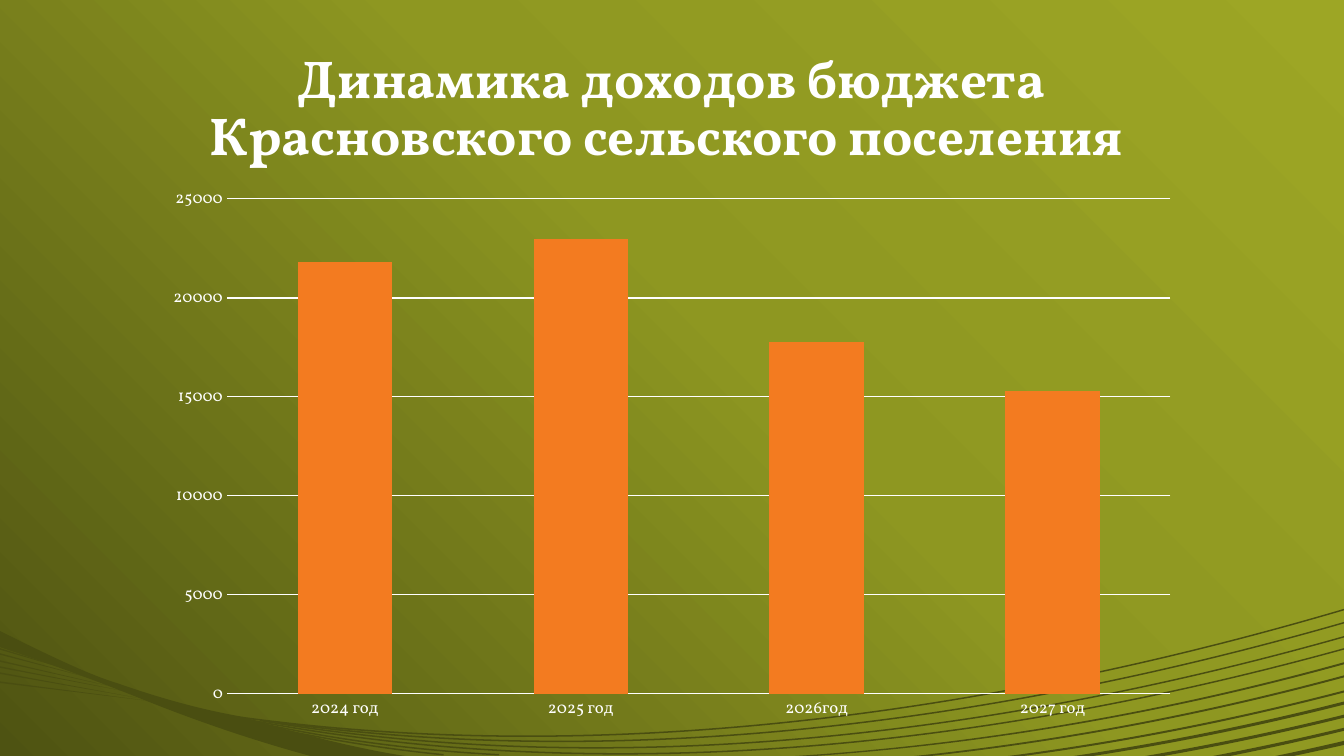
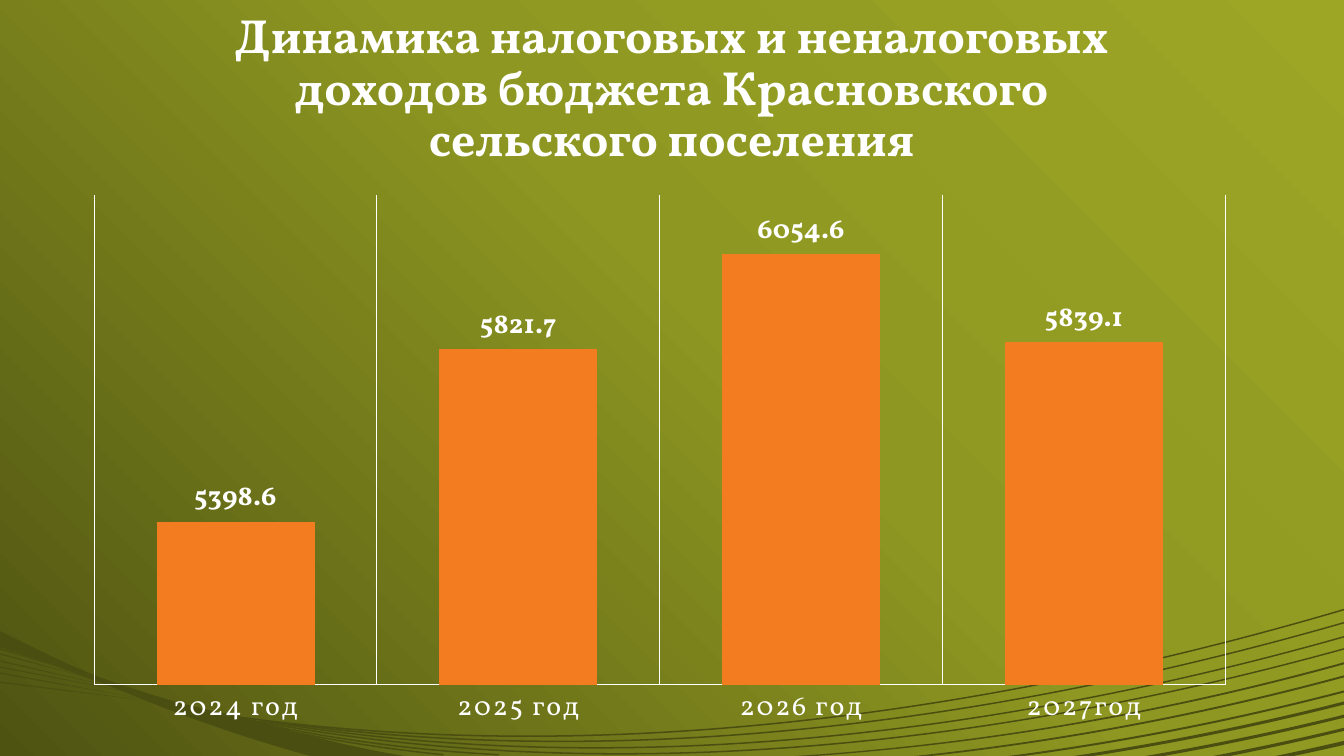
from lxml.etree import SubElement
from pptx import Presentation
from pptx.chart.data import CategoryChartData
from pptx.dml.color import RGBColor
from pptx.enum.chart import XL_CHART_TYPE as CT, XL_LABEL_POSITION as LP, XL_TICK_MARK as TM
from pptx.enum.text import MSO_ANCHOR, MSO_AUTO_SIZE, PP_ALIGN
from pptx.oxml.ns import qn
from pptx.util import Inches, Pt

W, H = 13.33, 7.5
FONT = "Vollkorn"
COLORS = {"light": "9DA625", "mid": "8E9721", "dark": "4E5312",
          "wave": "4A4E11", "text": "FFFFFF", "bar": "F37B20"}
BACKGROUND = [(0, "light"), (45, "mid"), (100, "dark")]
TITLE_BOX = (1.66, 0.44, 10, 1.27)

# Content
SLIDES = [
    {"title": "Динамика доходов бюджета Красновского сельского поселения ",
     "title_size": 38, "box": (1.66, 1.86, 10, 5.35),
     "plot": (0.059, 0.019, 0.936, 0.92),
     "cats": ["2024 год", "2025 год", "2026год", "2027 год"],
     "vals": [21800, 23000, 17800, 15300],
     "range": (0, 25000), "gap": 150, "size": 12, "values_on": "axis"},
    {"title": "Динамика налоговых и неналоговых доходов бюджета "
              "Красновского сельского поселения",
     "title_size": 34.2, "box": (0.76, 1.71, 11.58, 5.51),
     "plot": (0.015, 0.042, 0.969, 0.902),
     "cats": ["2024 год", "2025 год", "2026 год", "2027год"],
     "vals": [5398.6, 5821.7, 6054.6, 5839.1],
     "range": (5000, 6200), "gap": 79, "size": 20, "values_on": "bars"},
]

# Wave: short stripes as (top and bottom on the right edge, two ends on the floor)
STRIPES = [(7.35, 7.39, 12.65, 12.83), (7.22, 7.25, 12.03, 12.2),
           (7.09, 7.12, 11.36, 11.54), (6.96, 6.99, 10.65, 10.84),
           (6.85, 6.87, 10, 10.15), (6.7, 6.72, 9.07, 9.23),
           (6.57, 6.59, 7.89, 8.08)]
# Long strands as Bezier points
STRANDS = [[(2.4, 7.11), (6, 7.6), (9.8, 7.08), (W, 6.04)],
           [(2.76, 7.16), (6.31, 7.65), (9.99, 7.13), (W, 6.17)],
           [(2.58, 7.14), (6.18, 7.75), (9.93, 7.27), (W, 6.31)],
           [(2.45, 7.13), (6.08, 7.83), (9.89, 7.38), (W, 6.43)],
           [(2.28, 7.1), (3.12, 7.3), (4, 7.43), (4.95, 7.48)],
           [(2.21, 7.1), (2.95, 7.28), (3.69, 7.41), (4.4, 7.48)]]
STRAND_WIDTH = 0.015
# Ribs on the left as (height on the left edge, tip)
RIBS = [(6.76, (1.45, 6.95)), (6.67, (1.35, 6.92)), (6.61, (1.2, 6.85)),
        (6.55, (1.06, 6.8)), (6.48, (0.91, 6.73)), (6.43, (0.7, 6.65))]
BODY = [[(0, 6.26), (0.5, 6.51), (0.9, 6.7), (1.17, 6.78)],
        [(1.17, 6.78), (1.6, 6.93), (2, 7.04), (2.4, 7.11)],
        [(2.4, 7.11), (2.9, 7.26), (3.5, 7.42), (4.02, H)],
        [(3.08, H), (2.53, 7.35), (2, 7.17), (1.47, 6.96)],
        [(1.47, 6.96), (1.1, 6.81), (0.55, 6.6), (0, 6.42)]]


def rgb(name):
    return RGBColor.from_string(COLORS[name])


def stripe_edge(y, x):
    """Curve from the right edge to the floor; the sag grows with length squared."""
    sag = 0.0065 * (W - x) ** 2
    dx, dy = (x - W) / 3, (H - y) / 3
    return [(W, y), (W + dx, y + dy + sag), (W + 2 * dx, y + 2 * dy + sag), (x, H)]


def straight(a, b):
    return [a, a, b, b]


def wave_outlines():
    """Closed outlines, each a list of four-point curves."""
    stripes = [[stripe_edge(top, x0), stripe_edge(bottom, x1)[::-1]]
               for top, bottom, x0, x1 in STRIPES]
    strands = [[curve, [(x, y + STRAND_WIDTH) for x, y in curve[::-1]]]
               for curve in STRANDS]
    ribs = [[straight((0, y), tip), straight(tip, (0, y + STRAND_WIDTH))]
            for y, tip in RIBS]
    return [BODY] + stripes + strands + ribs


def curve_points(outline):
    """Start point, then three points a curve, with straight joins between curves."""
    points = [outline[0][0]]
    for curve in outline:
        if curve[0] != points[-1]:
            points += straight(points[-1], curve[0])[1:]
        points += curve[1:]
    return [(Inches(x), Inches(y)) for x, y in points]


def bend_paths(sp):
    """Turn each three line steps into one curve, and each outline into a path."""
    paths = sp.element.find(".//" + qn("a:pathLst"))
    source = paths[0]
    size = {"w": source.get("w"), "h": source.get("h")}
    corners = []
    for step in list(source):
        if step.tag == qn("a:moveTo"):
            target = SubElement(paths, qn("a:path"), size)
            target.append(step)
        elif step.tag == qn("a:lnTo"):
            corners.append(step[0])
            if len(corners) == 3:
                SubElement(target, qn("a:cubicBezTo")).extend(corners)
                corners = []
        else:
            target.append(step)
    paths.remove(source)


def set_background(master):
    fill = master.background.fill
    fill.gradient()
    fill.gradient_angle = 225
    stops = master.element.find(".//" + qn("a:gsLst"))
    for stop in list(stops):
        stops.remove(stop)
    for pos, name in BACKGROUND:
        stop = SubElement(stops, qn("a:gs"), pos=str(pos * 1000))
        SubElement(stop, qn("a:srgbClr"), val=COLORS[name])


def add_wave(slide, master):
    """Draw the wave, then hand it to the master so that all slides share it."""
    first, *others = map(curve_points, wave_outlines())
    builder = slide.shapes.build_freeform(*first[0], scale=1.0)
    builder.add_line_segments(first[1:], close=True)
    for points in others:
        builder.move_to(*points[0])
        builder.add_line_segments(points[1:], close=True)
    sp = builder.convert_to_shape()
    bend_paths(sp)
    sp.shadow.inherit = False
    sp.fill.solid()
    sp.fill.fore_color.rgb = rgb("wave")
    sp.line.fill.background()
    master.shapes.element.insert(2, sp.element)


def style_font(font, size, bold=False):
    font.name, font.size, font.bold = FONT, Pt(size), bold
    font.color.rgb = rgb("text")


def add_title(slide, text, size):
    sp = slide.shapes.title
    sp.left, sp.top, sp.width, sp.height = map(Inches, TITLE_BOX)
    tf = sp.text_frame
    tf.word_wrap, tf.auto_size = True, MSO_AUTO_SIZE.NONE
    tf.vertical_anchor = MSO_ANCHOR.BOTTOM
    p = tf.paragraphs[0]
    p.alignment, p.line_spacing = PP_ALIGN.CENTER, 0.9
    r = p.add_run()
    r.text = text
    style_font(r.font, size, bold=True)


def style_line(line):
    line.color.rgb = rgb("text")
    line.width = Pt(0.75)


def set_plot_area(chart, shares):
    area = chart.element.find(".//" + qn("c:plotArea"))
    for old in area.findall(qn("c:layout")):
        area.remove(old)
    layout = SubElement(area, qn("c:layout"))
    area.insert(0, layout)
    manual = SubElement(layout, qn("c:manualLayout"))
    settings = [("layoutTarget", "inner"), ("xMode", "edge"), ("yMode", "edge")]
    for tag, val in settings + list(zip("xywh", shares)):
        SubElement(manual, qn("c:" + tag), val=str(val))


def add_column_chart(slide, item):
    data = CategoryChartData()
    data.categories = item["cats"]
    data.add_series("Series 1", item["vals"])
    chart = slide.shapes.add_chart(
        CT.COLUMN_CLUSTERED, *map(Inches, item["box"]), data).chart
    chart.has_legend = chart.has_title = False
    style_font(chart.font, 10)
    set_plot_area(chart, item["plot"])

    plot = chart.plots[0]
    plot.gap_width, plot.vary_by_categories = item["gap"], False
    fill = plot.series[0].format.fill
    fill.solid()
    fill.fore_color.rgb = rgb("bar")

    cat, val = chart.category_axis, chart.value_axis
    val.minimum_scale, val.maximum_scale = item["range"]
    for axis in (cat, val):
        axis.major_tick_mark = axis.minor_tick_mark = TM.NONE
        style_font(axis.tick_labels.font, item["size"])

    on_bars = item["values_on"] == "bars"
    cat.has_major_gridlines, val.has_major_gridlines = on_bars, not on_bars
    style_line((cat if on_bars else val).major_gridlines.format.line)
    if on_bars:
        val.visible = False
        style_line(cat.format.line)
        # Wider letter spacing for the years
        years = chart.element.find(".//" + qn("c:catAx")).find(".//" + qn("a:defRPr"))
        years.set("spc", "120")
        plot.has_data_labels = True
        labels = plot.data_labels
        labels.show_value, labels.position = True, LP.OUTSIDE_END
        style_font(labels.font, item["size"], bold=True)
    else:
        for axis in (cat, val):
            axis.format.line.fill.background()


def main():
    prs = Presentation()
    prs.slide_width, prs.slide_height = Inches(W), Inches(H)
    master = prs.slide_master
    set_background(master)
    for n, item in enumerate(SLIDES):
        slide = prs.slides.add_slide(prs.slide_layouts.get_by_name("Title Only"))
        if n == 0:
            add_wave(slide, master)
        add_title(slide, item["title"], item["title_size"])
        add_column_chart(slide, item)
    prs.save("out.pptx")


if __name__ == "__main__":
    main()
